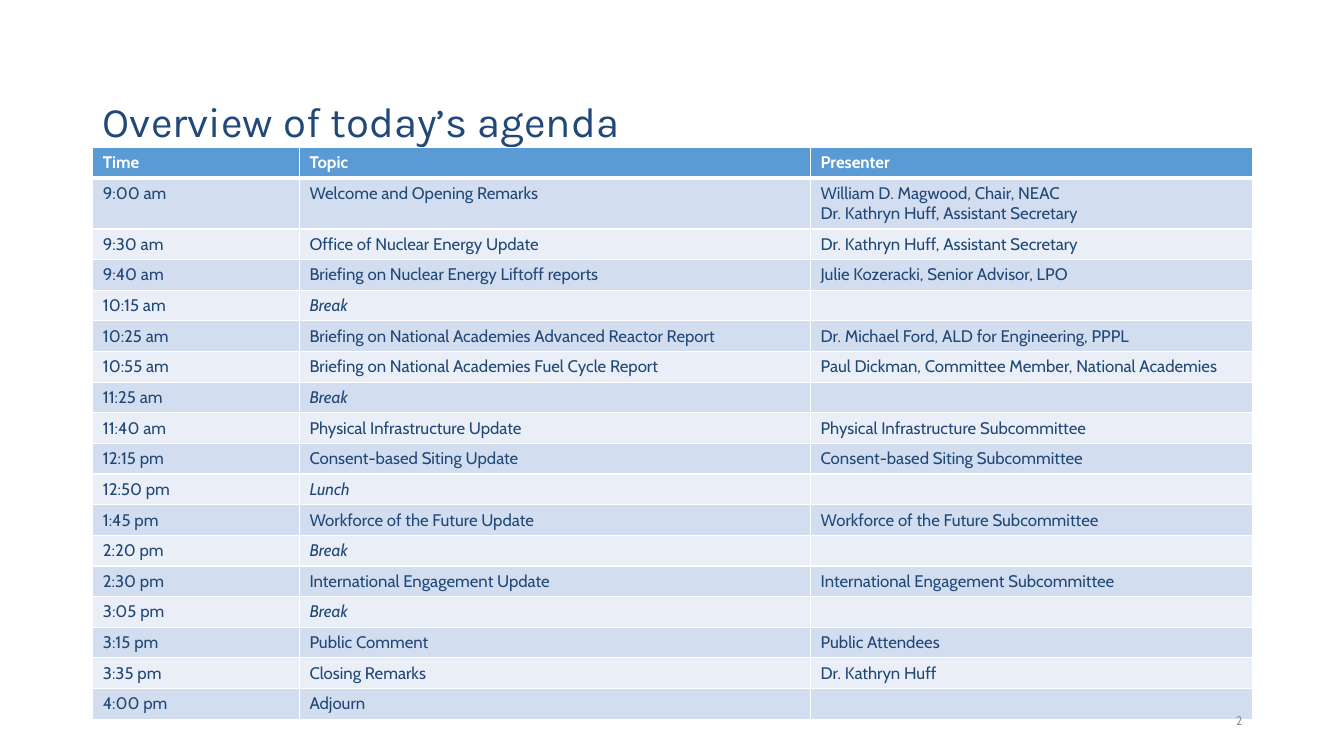
from lxml.etree import SubElement
from pptx import Presentation
from pptx.dml.color import RGBColor
from pptx.enum.text import MSO_ANCHOR, PP_ALIGN
from pptx.oxml.ns import qn
from pptx.util import Inches, Pt

COLOURS = {"navy": "214877", "white": "FFFFFF", "header": "5B9BD5",
           "dark band": "D2DEEF", "light band": "EAEFF7", "grey": "8D95A7"}
TITLE_FORMAT = {"name": "Karla", "size": Pt(30), "bold": False}
HEADER_FORMAT = {"name": "Cabin", "size": Pt(12), "bold": True, "italic": False}
BODY_FORMAT = HEADER_FORMAT | {"bold": False}
PAUSE_FORMAT = BODY_FORMAT | {"italic": True}
NUMBER_FORMAT = {"name": "Cabin", "size": Pt(9)}
PAUSES = {"Break", "Lunch"}
COLUMN_WIDTHS = [2.05, 5.07, 4.38]
LINE_HEIGHT, ROW_PADDING = 0.2, 0.08

AGENDA = [
    ("Time", "Topic", "Presenter"),
    ("9:00 am", "Welcome and Opening Remarks",
     "William D. Magwood, Chair, NEAC\nDr. Kathryn Huff, Assistant Secretary"),
    ("9:30 am", "Office of Nuclear Energy Update", "Dr. Kathryn Huff, Assistant Secretary"),
    ("9:40 am", "Briefing on Nuclear Energy Liftoff reports", "Julie Kozeracki, Senior Advisor, LPO"),
    ("10:15 am", "Break", ""),
    ("10:25 am", "Briefing on National Academies Advanced Reactor Report",
     "Dr. Michael Ford, ALD for Engineering, PPPL"),
    ("10:55 am", "Briefing on National Academies Fuel Cycle Report",
     "Paul Dickman, Committee Member, National Academies"),
    ("11:25 am", "Break", ""),
    ("11:40 am", "Physical Infrastructure Update", "Physical Infrastructure Subcommittee"),
    ("12:15 pm", "Consent-based Siting Update", "Consent-based Siting Subcommittee"),
    ("12:50 pm", "Lunch", ""),
    ("1:45 pm", "Workforce of the Future Update", "Workforce of the Future Subcommittee"),
    ("2:20 pm", "Break", ""),
    ("2:30 pm", "International Engagement Update", "International Engagement Subcommittee"),
    ("3:05 pm", "Break", ""),
    ("3:15 pm", "Public Comment", "Public Attendees"),
    ("3:35 pm", "Closing Remarks", "Dr. Kathryn Huff"),
    ("4:00 pm", "Adjourn", ""),
]


def write(frame, text, colour, formats, align=PP_ALIGN.LEFT):
    """Fill a text frame with formatted text, one paragraph a line."""
    frame.text = text
    for para in frame.paragraphs:
        para.alignment = align
        for span in para.runs:
            for name, value in formats.items():
                setattr(span.font, name, value)
            span.font.color.rgb = RGBColor.from_string(COLOURS[colour])
        if not para.runs:
            SubElement(para._p, qn("a:endParaRPr"), sz=str(int(formats["size"].pt * 100)))


def add_borders(cell, bottom):
    """Draw white lines on the four sides of a cell."""
    properties = cell._tc.get_or_add_tcPr()
    for side, width in {"L": 1, "R": 1, "T": 1, "B": bottom}.items():
        line = SubElement(properties, qn(f"a:ln{side}"), w=str(Pt(width)))
        fill = SubElement(line, qn("a:solidFill"))
        SubElement(fill, qn("a:srgbClr"), val=COLOURS["white"])


def add_title(page, box):
    """Place the title placeholder in the given box."""
    title = page.shapes.title
    title.left, title.top, title.width, title.height = map(Inches, box)
    write(title.text_frame, "Overview of today’s agenda", "navy", TITLE_FORMAT)
    title.text_frame.vertical_anchor = MSO_ANCHOR.MIDDLE
    title.text_frame.paragraphs[0].line_spacing = 0.9


def add_agenda(page, box):
    """Place the banded agenda table in the given box."""
    table = page.shapes.add_table(len(AGENDA), len(COLUMN_WIDTHS), *map(Inches, box)).table
    for column, width in zip(table.columns, COLUMN_WIDTHS):
        column.width = Inches(width)
    for index, entries in enumerate(AGENDA):
        lines = max(entry.count("\n") + 1 for entry in entries)
        table.rows[index].height = Inches(lines * LINE_HEIGHT + ROW_PADDING)
        is_header = index == 0
        band = "header" if is_header else ("light band", "dark band")[index % 2]
        for cell, entry in zip(table.rows[index].cells, entries):
            add_borders(cell, bottom=3 if is_header else 1)
            cell.fill.solid()
            cell.fill.fore_color.rgb = RGBColor.from_string(COLOURS[band])
            if is_header:
                write(cell.text_frame, entry, "white", HEADER_FORMAT)
            else:
                formats = PAUSE_FORMAT if entry in PAUSES else BODY_FORMAT
                write(cell.text_frame, entry, "navy", formats)


def add_page_number(page, box):
    """Place the page number at the right of the given box."""
    frame = page.shapes.add_textbox(*map(Inches, box)).text_frame
    frame.word_wrap = True
    frame.vertical_anchor = MSO_ANCHOR.MIDDLE
    write(frame, "2", "grey", NUMBER_FORMAT, PP_ALIGN.RIGHT)


def main():
    """Build the agenda slide and save it."""
    deck = Presentation()
    deck.slide_width, deck.slide_height = Inches(13.33), Inches(7.5)
    page = deck.slides.add_slide(deck.slide_layouts[5])
    left, width, number_width = 0.92, sum(COLUMN_WIDTHS), 3
    add_title(page, (left, 0.73, width, 1))
    add_agenda(page, (left, 1.46, width, 5.6))
    add_page_number(page, (left + width - number_width, 6.95, number_width, 0.4))
    deck.save("out.pptx")


if __name__ == "__main__":
    main()
